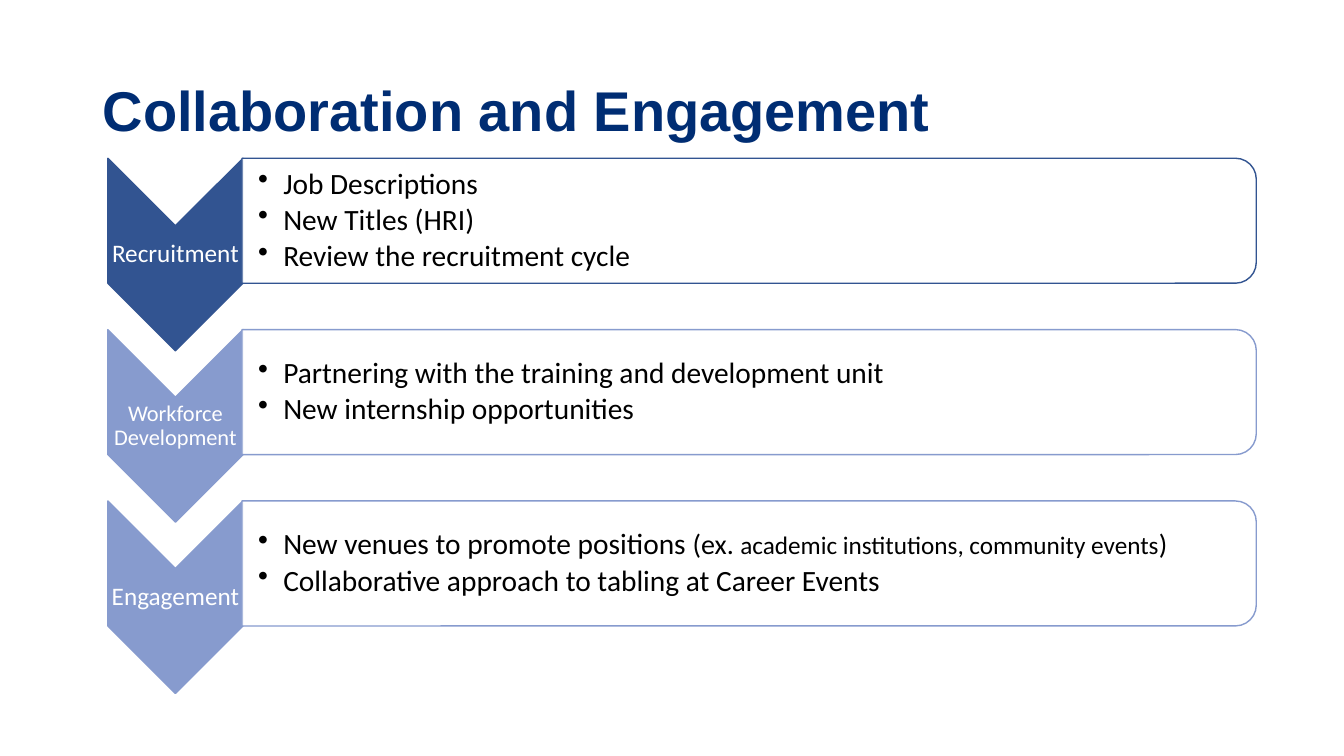
from lxml.etree import SubElement
from pptx import Presentation
from pptx.dml.color import RGBColor
from pptx.enum.shapes import MSO_SHAPE as Preset
from pptx.enum.text import MSO_ANCHOR as Anchor, PP_ALIGN as Align
from pptx.oxml.ns import qn
from pptx.util import Inches, Pt

TITLE = "Collaboration and Engagement"
NAVY, DARK, LIGHT, WHITE, BLACK = "002D73", "325491", "879BCE", "FFFFFF", "000000"
STAGES = [
    ("Recruitment", 18, DARK, [
        [("Job Descriptions", 21)],
        [("New Titles (HRI)", 21)],
        [("Review the recruitment cycle", 21)],
    ]),
    ("Workforce Development", 16, LIGHT, [
        [("Partnering with the training and development unit", 21)],
        [("New internship opportunities", 21)],
    ]),
    ("Engagement", 18, LIGHT, [
        [("New venues to promote positions ", 21), ("(ex. ", 20),
         ("academic institutions, community events", 18), (")", 20)],
        [("Collaborative approach to tabling at Career Events", 21)],
    ]),
]
FIRST_TOP, PITCH = 1.57, 1.7
CHEVRON_LEFT, CHEVRON_WIDTH, CHEVRON_HEIGHT = 1.07, 1.34, 1.91
PANEL_WIDTH, PANEL_HEIGHT = 10.06, 1.24
PANEL_LEFT = CHEVRON_LEFT + CHEVRON_WIDTH - 0.01


def rgb(value):
    return RGBColor.from_string(value)


def write(frame, lines, color, font="Calibri", bold=False, align=Align.LEFT,
          after=0, bullet=False, left_inset=None):
    frame.word_wrap = True
    frame.vertical_anchor = Anchor.MIDDLE
    if left_inset is not None:
        frame.margin_left = Inches(left_inset)
        frame.margin_right = frame.margin_top = frame.margin_bottom = Inches(0.01)
    for index, line in enumerate(lines):
        para = frame.paragraphs[0] if index == 0 else frame.add_paragraph()
        para.alignment = align
        para.line_spacing = 0.9
        para.space_after = Pt(after)
        if bullet:
            props = para._p.get_or_add_pPr()
            props.set("marL", str(Inches(0.25)))
            props.set("indent", str(Inches(-0.25)))
            SubElement(props, qn("a:buChar")).set("char", "•")
        for text, size in line:
            span = para.add_run()
            span.text = text
            span.font.name = font
            span.font.size = Pt(size)
            span.font.bold = bold
            span.font.color.rgb = rgb(color)


def add_turned(page, preset, left, top, width, height, fill, line, opacity=100):
    shape = page.shapes.add_shape(
        preset, Inches(left + (width - height) / 2),
        Inches(top + (height - width) / 2), Inches(height), Inches(width))
    shape.rotation = 90
    shape.shadow.inherit = False
    shape.fill.solid()
    shape.fill.fore_color.rgb = rgb(fill)
    if opacity < 100:
        tint = shape._element.spPr.find(qn("a:solidFill"))[0]
        SubElement(tint, qn("a:alpha")).set("val", str(opacity * 1000))
    shape.line.color.rgb = rgb(line)
    shape.line.width = Pt(1)


def add_text(page, left, top, width, height, lines, **style):
    box = page.shapes.add_textbox(
        Inches(left), Inches(top), Inches(width), Inches(height))
    write(box.text_frame, lines, **style)


def add_stage(page, top, label, label_size, color, bullets):
    add_turned(page, Preset.CHEVRON, CHEVRON_LEFT, top,
               CHEVRON_WIDTH, CHEVRON_HEIGHT, color, color)
    add_text(page, CHEVRON_LEFT, top + CHEVRON_WIDTH / 2, CHEVRON_WIDTH,
             CHEVRON_HEIGHT - CHEVRON_WIDTH, [[(label, label_size)]],
             color=WHITE, align=Align.CENTER, after=label_size * 0.35, left_inset=0.01)
    add_turned(page, Preset.ROUND_2_SAME_RECTANGLE, PANEL_LEFT, top,
               PANEL_WIDTH, PANEL_HEIGHT, WHITE, color, opacity=90)
    add_text(page, PANEL_LEFT, top + 0.06, PANEL_WIDTH - 0.06, PANEL_HEIGHT - 0.12,
             bullets, color=BLACK, after=3.15, bullet=True, left_inset=0.16)


def main():
    deck = Presentation()
    deck.slide_width, deck.slide_height = Inches(13.33), Inches(7.5)
    page = deck.slides.add_slide(deck.slide_layouts[5])
    title = page.shapes.title
    title.left, title.top = Inches(0.92), Inches(0.4)
    title.width, title.height = Inches(11.5), Inches(1.45)
    write(title.text_frame, [[(TITLE, 40)]], NAVY, font="Arial", bold=True)
    for index, stage in enumerate(STAGES):
        add_stage(page, FIRST_TOP + index * PITCH, *stage)
    deck.save("out.pptx")


if __name__ == "__main__":
    main()
